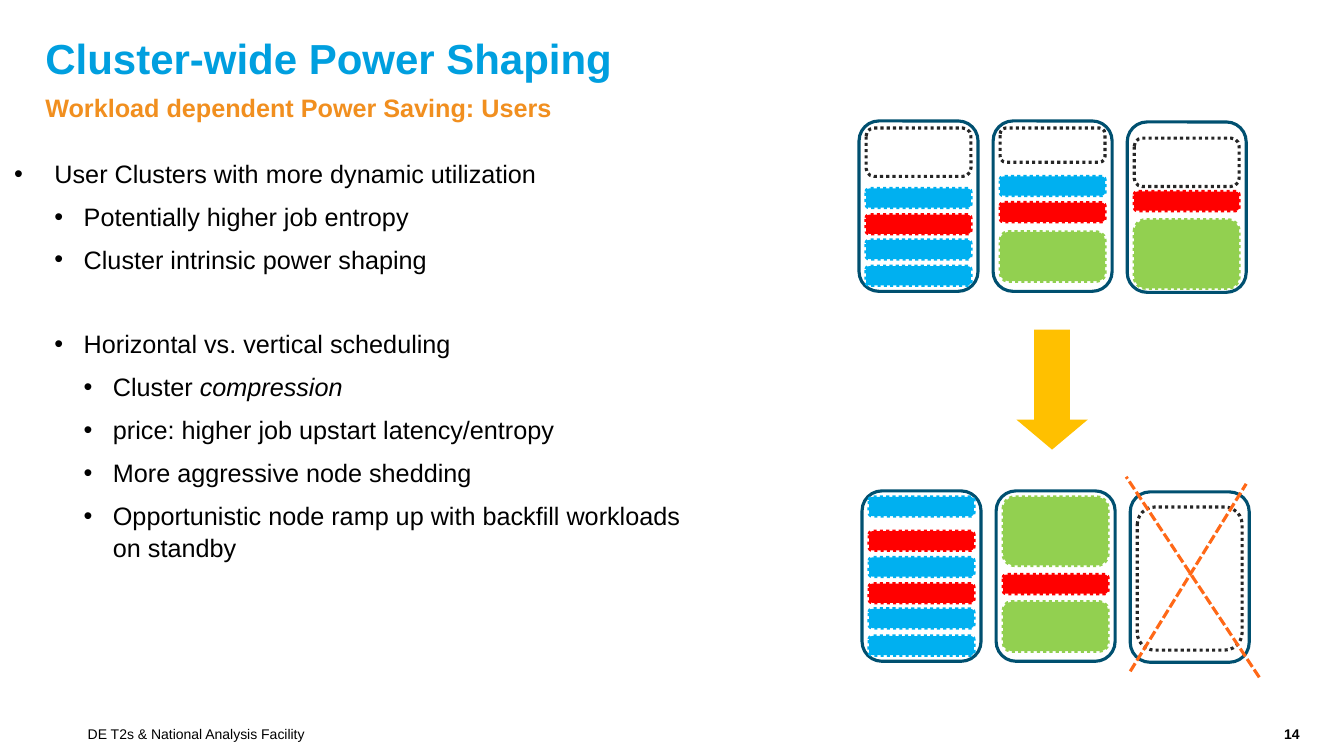
from lxml.etree import SubElement
from pptx import Presentation
from pptx.dml.color import RGBColor
from pptx.enum.dml import MSO_LINE
from pptx.enum.shapes import MSO_CONNECTOR, MSO_SHAPE
from pptx.enum.text import MSO_ANCHOR, PP_ALIGN
from pptx.oxml.ns import qn
from pptx.util import Inches, Pt

BLUE, RED, GREEN, FREE = "00B0F0", "FF0000", "92D050", None
RACK_STEP, RACK_WIDTH, RACK_HEIGHT = 1.33, 1.18, 1.69
JOB_INSET, JOB_WIDTH, SMALL_JOB = 0.07, 1.04, 0.19

FRAME = {"margin_left": 0, "margin_right": 0, "margin_top": 0,
         "margin_bottom": 0, "word_wrap": True,
         "vertical_anchor": MSO_ANCHOR.TOP}

SPREAD_RACKS = [
    (0, [(FREE, 0.07, 0.48), (BLUE, 0.67, SMALL_JOB), (RED, 0.93, SMALL_JOB),
         (BLUE, 1.18, SMALL_JOB), (BLUE, 1.44, SMALL_JOB)]),
    (0, [(FREE, 0.07, 0.34), (BLUE, 0.55, SMALL_JOB), (RED, 0.81, SMALL_JOB),
         (GREEN, 1.1, 0.49)]),
    (0.01, [(FREE, 0.16, 0.48), (RED, 0.69, SMALL_JOB), (GREEN, 0.97, 0.68)]),
]
COMPRESSED_RACKS = [
    (0, [(BLUE, 0.06, SMALL_JOB), (RED, 0.4, SMALL_JOB),
         (BLUE, 0.66, SMALL_JOB), (RED, 0.92, SMALL_JOB),
         (BLUE, 1.17, SMALL_JOB), (BLUE, 1.44, SMALL_JOB)]),
    (0, [(GREEN, 0.06, 0.68), (RED, 0.83, SMALL_JOB), (GREEN, 1.1, 0.49)]),
    (0.01, [(FREE, 0.15, 1.42)]),
]

LEVELS = [(0.4, -0.4), (0.69, -0.29), (0.98, -0.29)]
POINTS = [
    (0, 0, [("User Clusters with more dynamic utilization", False)]),
    (1, 8, [("Potentially higher job entropy", False)]),
    (1, 8, [("Cluster intrinsic power shaping", False)]),
    (1, 37.6, [("Horizontal vs. vertical scheduling", False)]),
    (2, 8, [("Cluster ", False), ("compression", True)]),
    (2, 8, [("price: higher job upstart latency/entropy", False)]),
    (2, 8, [("More aggressive node shedding", False)]),
    (2, 8, [("Opportunistic node ramp up with backfill workloads on standby",
             False)]),
]


def colour(value):
    """Turn a hex string into a colour."""
    return RGBColor.from_string(value)


def apply(target, formats):
    """Set every attribute in a dict of format values."""
    for name, value in formats.items():
        setattr(target, name, value)


def style_font(font, size, hex_colour="000000", bold=False, italic=False):
    """Give a font its size, colour and weight."""
    apply(font, {"name": "Arial", "size": Pt(size), "bold": bold,
                 "italic": italic})
    font.color.rgb = colour(hex_colour)


def add_frame(slide, box):
    """Add a text box without margins and return its frame."""
    frame = slide.shapes.add_textbox(*map(Inches, box)).text_frame
    apply(frame, FRAME)
    return frame


def add_line_of_text(slide, box, text, size, hex_colour="000000", bold=False,
                     **formats):
    """Add a single line of text in a box."""
    paragraph = add_frame(slide, box).paragraphs[0]
    paragraph.text = text
    apply(paragraph, formats)
    style_font(paragraph.runs[0].font, size, hex_colour, bold)


def add_title(slide, box, text):
    """Place and format the title placeholder."""
    title = slide.shapes.title
    apply(title, dict(zip(("left", "top", "width", "height"),
                          map(Inches, box))))
    apply(title.text_frame, FRAME)
    title.text_frame.text = text
    paragraph = title.text_frame.paragraphs[0]
    apply(paragraph, {"alignment": PP_ALIGN.LEFT, "line_spacing": 0.9})
    style_font(paragraph.runs[0].font, 30, "009FDF", True)


def add_points(slide, box):
    """Write the bulleted list into a box."""
    frame = add_frame(slide, box)
    for number, (level, before, pieces) in enumerate(POINTS):
        paragraph = frame.add_paragraph() if number else frame.paragraphs[0]
        margin, indent = LEVELS[level]
        properties = paragraph._p.get_or_add_pPr()
        properties.set("marL", str(Inches(margin)))
        properties.set("indent", str(Inches(indent)))
        SubElement(properties, qn("a:buFont")).set("typeface", "Arial")
        SubElement(properties, qn("a:buChar")).set("char", "•")
        apply(paragraph, {"level": level, "space_before": Pt(before),
                          "line_spacing": 1.05 if level else 1.1})
        for text, italic in pieces:
            run = paragraph.add_run()
            run.text = text
            style_font(run.font, 18, italic=italic)


def add_block(slide, kind, box, fill=None, line=None, dash=None):
    """Add a preset shape with an optional fill and outline."""
    block = slide.shapes.add_shape(kind, *map(Inches, box))
    block.shadow.inherit = False
    if fill:
        block.fill.solid()
        block.fill.fore_color.rgb = colour(fill)
    else:
        block.fill.background()
    if line:
        block.line.color.rgb = colour(line)
        apply(block.line, {"width": Pt(2.25), "dash_style": dash})
    else:
        block.line.fill.background()
    return block


def add_cluster(slide, left, top, racks):
    """Draw a row of racks with the jobs and free room in them."""
    for number, (drop, jobs) in enumerate(racks):
        rack_left, rack_top = left + number * RACK_STEP, top + drop
        add_block(slide, MSO_SHAPE.ROUNDED_RECTANGLE,
                  (rack_left, rack_top, RACK_WIDTH, RACK_HEIGHT),
                  line="005070")
        for job, offset, height in jobs:
            add_block(slide, MSO_SHAPE.ROUNDED_RECTANGLE,
                      (rack_left + JOB_INSET, rack_top + offset, JOB_WIDTH,
                       height),
                      job, job or "262626", MSO_LINE.ROUND_DOT)


def add_arrow(slide, box):
    """Draw the arrow from the spread to the compressed cluster."""
    arrow = add_block(slide, MSO_SHAPE.DOWN_ARROW, box, "FFC000")
    arrow.adjustments[1] = 0.42


def add_cross(slide, left, top):
    """Cross out the rack that is shed, relative to its corner."""
    for ends in ((0, 1.78, 1.15, -0.08), (1.28, 1.84, -0.04, -0.15)):
        x1, y1, x2, y2 = ends
        stroke = slide.shapes.add_connector(
            MSO_CONNECTOR.STRAIGHT, Inches(left + x1), Inches(top + y1),
            Inches(left + x2), Inches(top + y2))
        stroke.line.color.rgb = colour("FF6817")
        apply(stroke.line, {"width": Pt(2.25), "dash_style": MSO_LINE.DASH})
        stroke.line._ln.find(qn("a:prstDash")).set("val", "sysDash")
        SubElement(stroke._element.spPr, qn("a:effectLst"))


def add_footer(slide, left, right, top):
    """Write the footer text and the page number."""
    add_line_of_text(slide, (left, top, 10.88, 0.15),
                     "DE T2s & National Analysis Facility", 10)
    add_line_of_text(slide, (right - 0.3, top, 0.3, 0.15), "14", 10,
                     bold=True, alignment=PP_ALIGN.RIGHT)


def main():
    """Build the slide and save it."""
    deck = Presentation()
    apply(deck, {"slide_width": Inches(13.33), "slide_height": Inches(7.5)})
    slide = deck.slides.add_slide(deck.slide_layouts[5])
    add_title(slide, (0.45, 0.38, 12.44, 0.49), "Cluster-wide Power Shaping")
    add_line_of_text(slide, (0.45, 0.89, 12.44, 0.41),
                     "Workload dependent Power Saving: Users", 18, "F18F1F",
                     True, line_spacing=1.1)
    add_points(slide, (0.14, 1.54, 6.88, 5.48))
    add_cluster(slide, 8.52, 1.2, SPREAD_RACKS)
    add_arrow(slide, (10.08, 3.27, 0.71, 1.19))
    add_cluster(slide, 8.55, 4.87, COMPRESSED_RACKS)
    add_cross(slide, 8.55 + 2 * RACK_STEP, 4.88)
    add_footer(slide, 0.87, 12.89, 7.2)
    deck.save("out.pptx")


if __name__ == "__main__":
    main()
